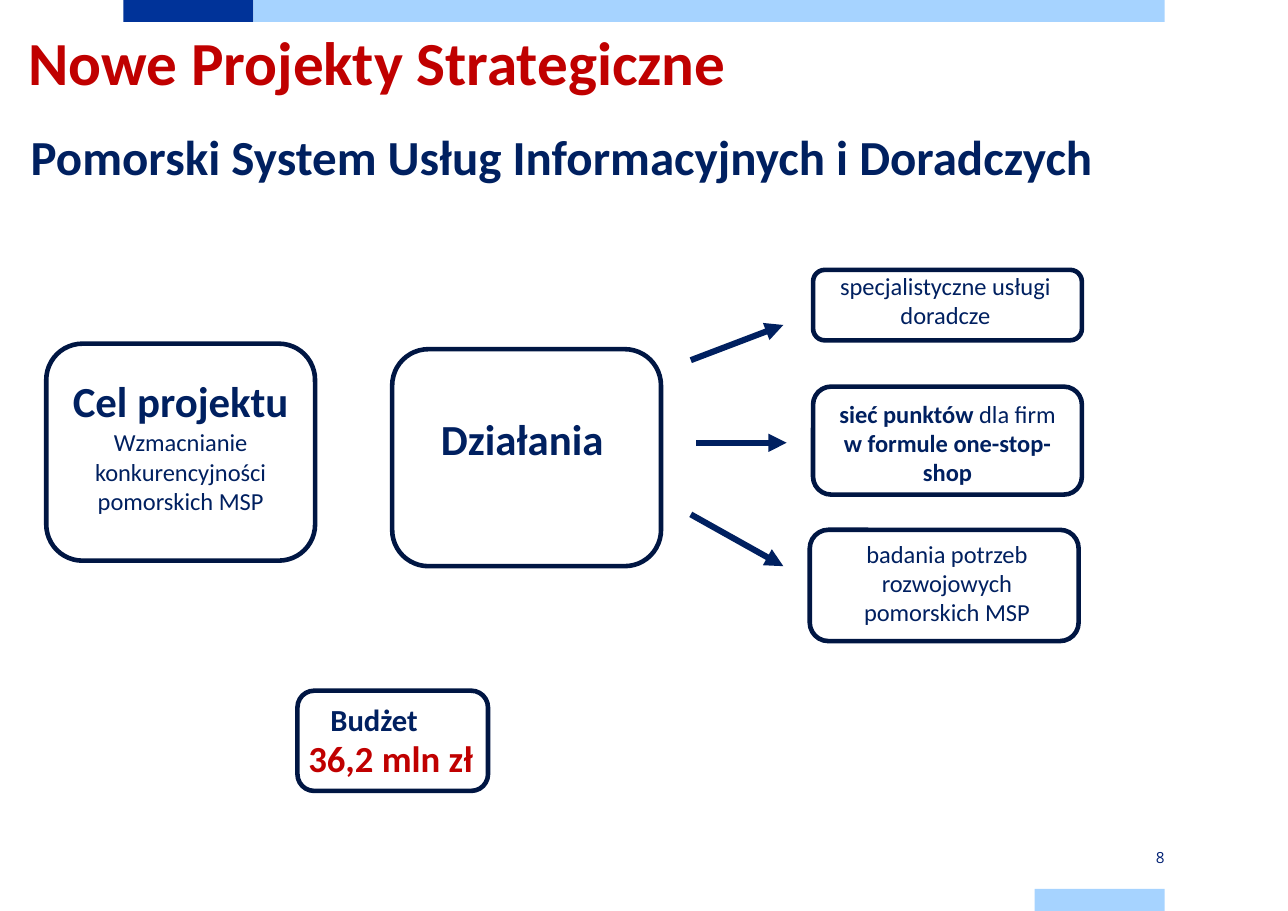
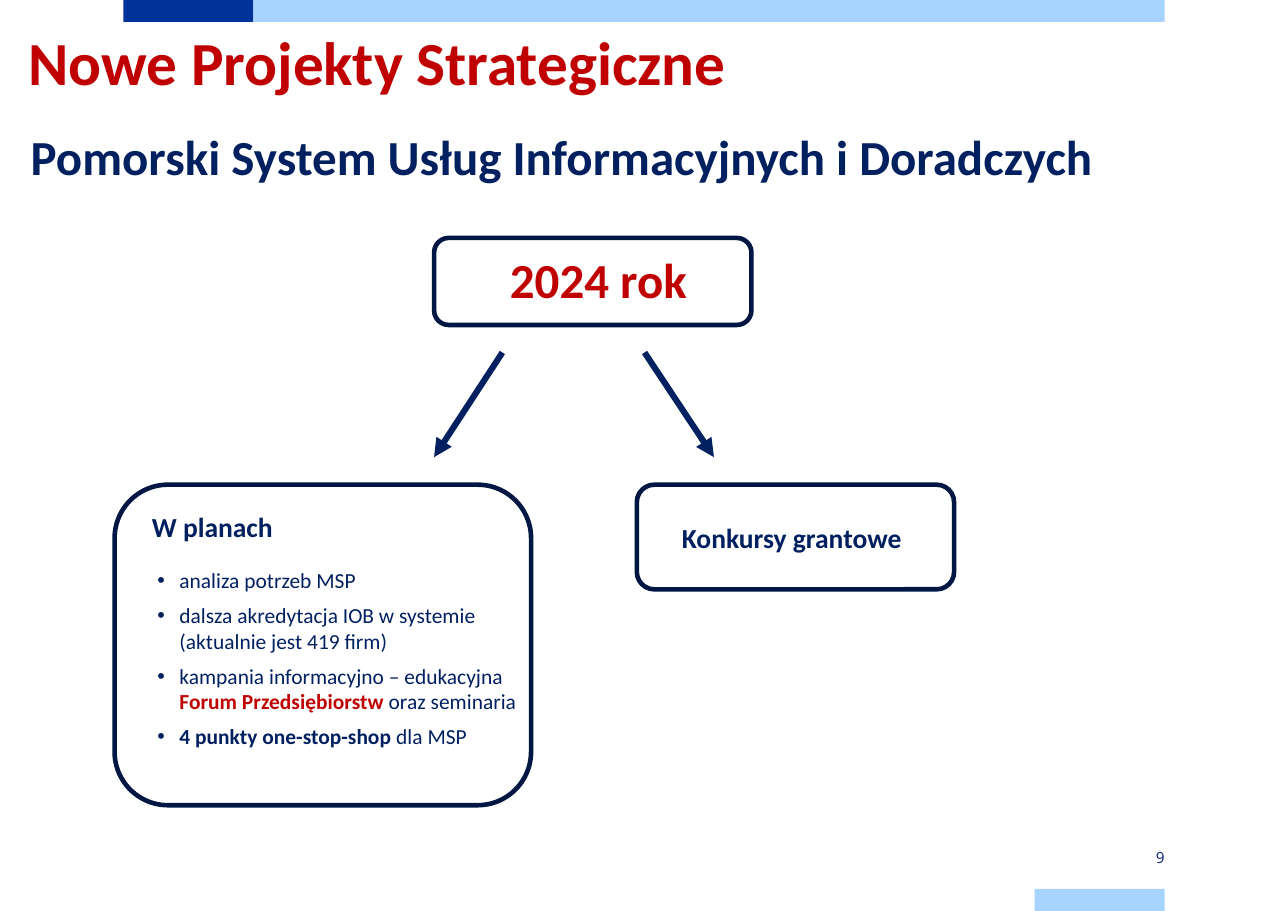
"""Two slides on the strategic project: goal, actions and budget, then plans for 2024."""
from lxml import etree
from pptx import Presentation
from pptx import util as u
from pptx.dml.color import RGBColor
from pptx.enum import shapes, text
from pptx.oxml.ns import qn

NAVY, RED, OUTLINE = "002060", "C00000", "001643"
BLUE, SKY, NUMBER = "003399", "A6D3FF", "002073"
LEFT, CENTER, RIGHT = text.PP_ALIGN.LEFT, text.PP_ALIGN.CENTER, text.PP_ALIGN.RIGHT


def rgb(value):
    """Turn a hex string into a colour."""
    return RGBColor.from_string(value)


def add_text(s, at, size, paras, align=LEFT, font="Calibri"):
    """Add a text box; each paragraph is a list of (text, bold, colour), "\\v" first for a line break."""
    tf = s.shapes.add_textbox(*map(u.Inches, at)).text_frame
    tf.word_wrap = True
    for i, runs in enumerate(paras):
        p = tf.add_paragraph() if i else tf.paragraphs[0]
        p.alignment = align
        for words, bold, color in runs:
            if words.startswith("\v"):
                p.add_line_break()
                etree.SubElement(p._p[-1], qn("a:rPr"), sz=str(size * 100))
            r = p.add_run()
            r.text = words.lstrip("\v")
            r.font.name, r.font.size, r.font.bold = font, u.Pt(size), bold
            r.font.color.rgb = rgb(color)
    return tf


prs = Presentation()
prs.slide_width, prs.slide_height = u.Inches(11.69), u.Inches(8.27)

bands = [(1.12, 0, 1.18, BLUE), (2.3, 0, 8.27, SKY), (9.39, 8.07, 1.18, SKY)]
boxes = {
    8: [(0.42, 3.12, 2.44, 1.97), (3.56, 3.17, 2.44, 1.97), (7.38, 2.45, 2.44, 0.64),
        (7.38, 3.51, 2.44, 0.98), (7.35, 4.81, 2.44, 1.01), (2.7, 6.27, 1.73, 0.91)],
    9: [(3.94, 2.16, 2.88, 0.79), (1.04, 4.4, 3.78, 2.91), (5.78, 4.4, 2.88, 0.95)],
}
arrows = {
    8: [(6.27, 3.27, 7.11, 2.95), (6.32, 4.02, 7.14, 4.02), (6.27, 4.67, 7.11, 5.14)],
    9: [(4.56, 3.2, 3.94, 4.15), (5.85, 3.2, 6.48, 4.15)],
}
headings = {
    8: [((0.46, 3.35, 2.36, 0.57), 28, "Cel projektu", NAVY, CENTER),
        ((3.56, 3.7, 2.36, 0.57), 28, "Działania", NAVY, CENTER),
        ((2.9, 6.31, 1.59, 0.44), 20, "Budżet", NAVY, LEFT),
        ((2.7, 6.63, 1.73, 0.5), 24, "36,2 mln zł", RED, LEFT)],
    9: [((4.53, 2.22, 2.2, 0.64), 32, "2024 rok", RED, LEFT),
        ((1.28, 4.58, 2.25, 0.4), 18, "W planach", NAVY, LEFT),
        ((6.09, 4.68, 2.25, 0.4), 18, "Konkursy grantowe", NAVY, LEFT)],
}

for number in (8, 9):
    s = prs.slides.add_slide(prs.slide_layouts[6])
    for x, y, w, color in bands:
        sp = s.shapes.add_shape(shapes.MSO_SHAPE.RECTANGLE, *map(u.Inches, (x, y, w, 0.2)))
        sp.shadow.inherit = False
        sp.fill.solid()
        sp.fill.fore_color.rgb = rgb(color)
        sp.line.fill.background()

    tf = add_text(s, (9.39, 7.68, 1.18, 0.2), 10, [[(str(number), False, NUMBER)]], RIGHT, "Open Sans")
    tf.margin_left = tf.margin_right = 0
    tf.margin_top = tf.margin_bottom = u.Inches(0.08)
    tf.vertical_anchor = text.MSO_ANCHOR.MIDDLE
    add_text(s, (0.16, 0.17, 11.18, 0.77), 40, [[("Nowe Projekty Strategiczne", True, RED)]])
    add_text(s, (0.18, 1.1, 11.18, 0.64), 32,
             [[("Pomorski System Usług Informacyjnych i Doradczych", True, NAVY)]])

    for at in boxes[number]:
        sp = s.shapes.add_shape(shapes.MSO_SHAPE.ROUNDED_RECTANGLE, *map(u.Inches, at))
        sp.shadow.inherit = False
        sp.fill.background()
        sp.line.color.rgb = rgb(OUTLINE)
        sp.line.width = u.Pt(3)

    for ends in arrows[number]:
        c = s.shapes.add_connector(shapes.MSO_CONNECTOR.STRAIGHT, *map(u.Inches, ends))
        c.line.color.rgb = rgb(NAVY)
        c.line.width = u.Pt(4)
        etree.SubElement(c.line._get_or_add_ln(), qn("a:tailEnd"), type="triangle")
        etree.SubElement(c._element.spPr, qn("a:effectLst"))

    for at, size, words, color, align in headings[number]:
        add_text(s, at, size, [[(words, True, color)]], align)

goal, plans = prs.slides
add_text(goal, (0.54, 3.83, 2.2, 0.91), 16,
         [[("Wzmacnianie konkurencyjności pomorskich MSP", False, NAVY)]], CENTER)

actions = [
    ((7.14, 2.41, 2.59, 0.64), [("specjalistyczne usługi doradcze", False, NAVY)]),
    ((7.15, 3.57, 2.61, 0.91), [("sieć punktów ", True, NAVY), ("dla firm", False, NAVY),
                                ("\vw formule one-stop-shop", True, NAVY)]),
    ((7.35, 4.84, 2.2, 0.91), [("badania potrzeb rozwojowych pomorskich MSP", False, NAVY)]),
]
for at, runs in actions:
    p = add_text(goal, at, 16, [runs], CENTER).paragraphs[0]
    p._p.get_or_add_pPr().set("marL", str(u.Inches(0.29)))

tf = add_text(plans, (1.04, 5.1, 3.78, 1.77), 14, [
    [("analiza potrzeb MSP", False, NAVY)],
    [("dalsza akredytacja IOB w systemie (aktualnie jest 419 firm)", False, NAVY)],
    [("kampania informacyjno – edukacyjna", False, NAVY),
     ("\vForum Przedsiębiorstw ", True, RED), ("oraz seminaria", False, NAVY)],
    [("4 punkty one-stop-shop ", True, NAVY), ("dla MSP", False, NAVY)],
])
for i, p in enumerate(tf.paragraphs):
    p.space_before = u.Pt(6 if i else 0)
    pPr = p._p.get_or_add_pPr()
    pPr.set("marL", str(u.Inches(0.49)))
    pPr.set("indent", str(u.Inches(-0.2)))
    etree.SubElement(pPr, qn("a:buFont"), typeface="Arial")
    etree.SubElement(pPr, qn("a:buChar"), char="•")

prs.save("out.pptx")
